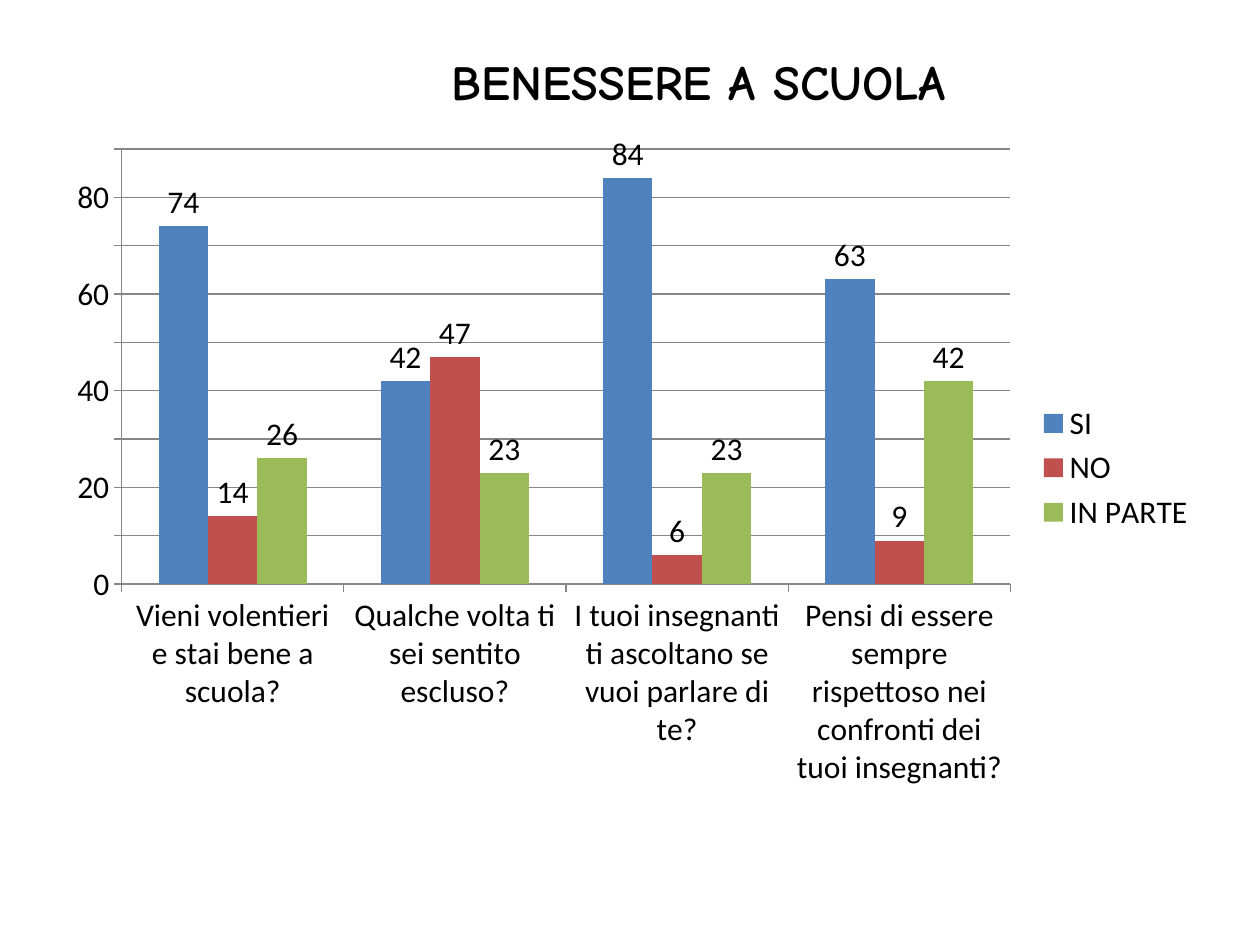
"""Build the school well-being survey slide with a clustered column chart."""
from pptx import Presentation
from pptx.chart.data import CategoryChartData
from pptx.dml.color import RGBColor
from pptx.enum.chart import XL_CHART_TYPE as ChartType
from pptx.enum.chart import XL_LABEL_POSITION as LabelPosition
from pptx.enum.chart import XL_LEGEND_POSITION as LegendPosition
from pptx.enum.chart import XL_TICK_MARK as TickMark
from pptx.enum.text import MSO_ANCHOR, PP_ALIGN
from pptx.util import Inches, Pt

TITLE = "BENESSERE A SCUOLA"
QUESTIONS = [
    "Vieni volentieri e stai bene a scuola?",
    "Qualche volta ti sei sentito escluso?",
    "I tuoi insegnanti ti ascoltano se vuoi parlare di te?",
    "Pensi di essere sempre rispettoso nei confronti dei tuoi insegnanti?",
]
ANSWERS = [
    ("SI", (74, 42, 84, 63), "4F81BD"),
    ("NO", (14, 47, 6, 9), "C0504D"),
    ("IN PARTE", (26, 23, 23, 42), "9BBB59"),
]
TITLE_BOX = (3.15, 0.36, 4.79, 0.57)
CHART_BOX = (0.43, 1.07, 9.16, 5.28)


def set_color(color_format, value):
    color_format.rgb = RGBColor.from_string(value)


def style_font(font, name, size, bold=False):
    font.name, font.size, font.bold = name, Pt(size), bold
    set_color(font.color, "000000")


def style_line(line):
    line.width = Pt(0.75)
    set_color(line.color, "868686")


def add_title(slide):
    title = slide.shapes.title
    title.left, title.top, title.width, title.height = map(Inches, TITLE_BOX)
    frame = title.text_frame
    frame.text = TITLE
    frame.word_wrap = False
    frame.vertical_anchor = MSO_ANCHOR.TOP
    paragraph = frame.paragraphs[0]
    paragraph.alignment = PP_ALIGN.CENTER
    style_font(paragraph.runs[0].font, "Comic Neue", 28, True)


def add_survey_chart(slide):
    data = CategoryChartData()
    data.categories = QUESTIONS
    for name, values, _ in ANSWERS:
        data.add_series(name, values)
    chart = slide.shapes.add_chart(
        ChartType.COLUMN_CLUSTERED, *map(Inches, CHART_BOX), data
    ).chart
    style_font(chart.font, "Calibri", 18)
    chart.has_title = False
    chart.has_legend = True
    chart.legend.position = LegendPosition.RIGHT
    chart.legend.include_in_layout = False

    for axis in (chart.category_axis, chart.value_axis):
        axis.major_tick_mark = TickMark.OUTSIDE
        style_line(axis.format.line)
    value_axis = chart.value_axis
    value_axis.minimum_scale, value_axis.maximum_scale = 0, 90
    value_axis.major_unit = 10
    style_line(value_axis.major_gridlines.format.line)

    plot = chart.plots[0]
    plot.gap_width, plot.overlap = 150, 0
    plot.vary_by_categories = False
    for series, (_, _, color) in zip(plot.series, ANSWERS):
        series.format.fill.solid()
        set_color(series.format.fill.fore_color, color)
        series.data_labels.show_value = True
        series.data_labels.position = LabelPosition.OUTSIDE_END


def main():
    presentation = Presentation()
    presentation.slide_width, presentation.slide_height = Inches(10), Inches(7.5)
    slide = presentation.slides.add_slide(presentation.slide_layouts[5])
    add_survey_chart(slide)
    add_title(slide)
    presentation.save("out.pptx")


if __name__ == "__main__":
    main()
